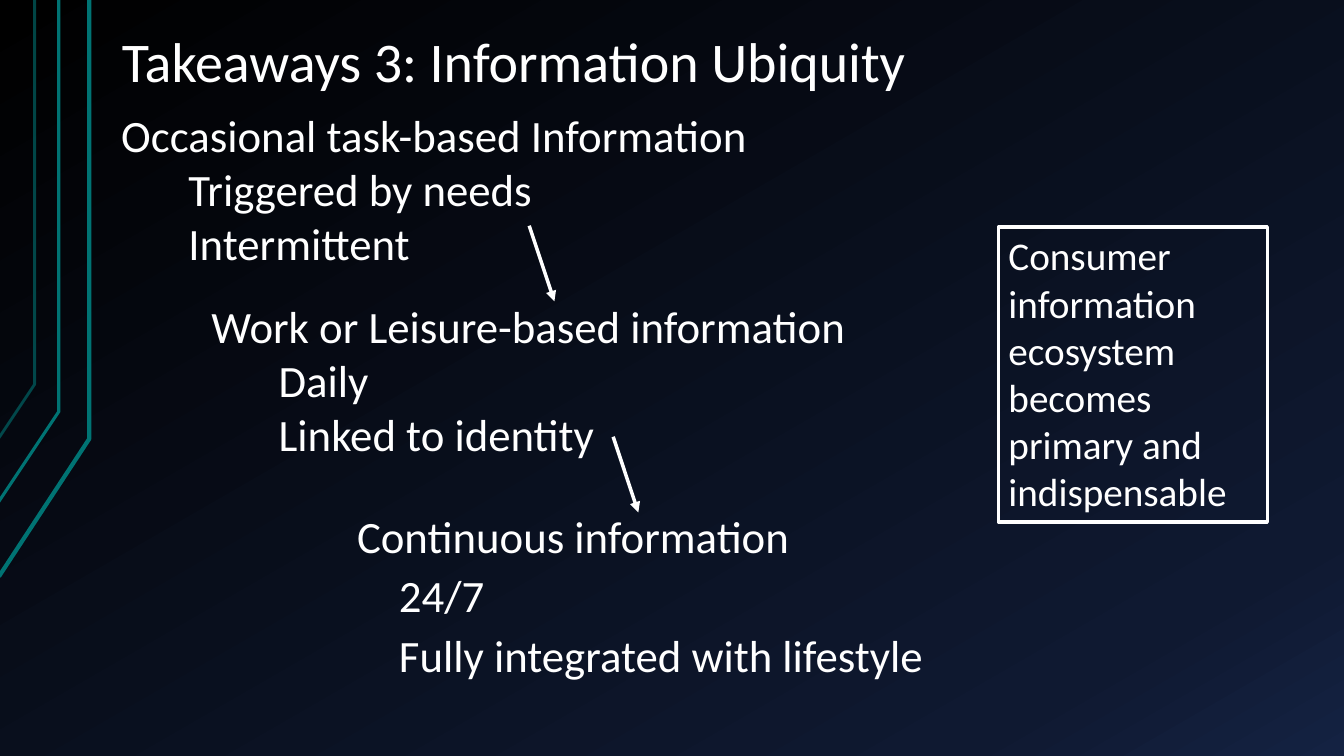
"""Build the information ubiquity takeaway slide."""
from copy import deepcopy

from pptx import Presentation
from pptx.dml.color import RGBColor
from pptx.enum.shapes import MSO_CONNECTOR as CONN, MSO_SHAPE as SHAPE
from pptx.enum.text import MSO_ANCHOR as ANCHOR, MSO_AUTO_SIZE as AUTO, PP_ALIGN as ALIGN
from pptx.oxml.ns import qn
from pptx.util import Emu, Pt
from lxml.etree import SubElement

PX = 9525
WHITE = RGBColor(0xFF, 0xFF, 0xFF)
TEAL = RGBColor(0x00, 0x73, 0x73)
BACKDROP = [
    (0, RGBColor(0x00, 0x00, 0x00)),
    (85, RGBColor(0x0F, 0x19, 0x31)),
    (100, RGBColor(0x14, 0x22, 0x42)),
]


def px(*lengths):
    return [Emu(n * PX) for n in lengths]


class Deck:
    font = "Calibri"
    line_width = 2.5

    def __init__(self, width, height):
        self.prs = Presentation()
        self.prs.slide_width, self.prs.slide_height = px(width, height)
        self.slide = None

    def add_slide(self):
        self.slide = self.prs.slides.add_slide(self.prs.slide_layouts[5])

    def background(self, stops, angle):
        fill = self.slide.background.fill
        fill.gradient()
        fill.gradient_angle = 360 - angle
        gs_list = fill._fill._gradFill.find(qn("a:gsLst"))
        for _ in range(len(stops) - len(gs_list)):
            gs_list.append(deepcopy(gs_list[-1]))
        for stop, (position, color) in zip(fill.gradient_stops, stops):
            stop.position = position / 100
            stop.color.rgb = color

    def circuit(self, points, width, opacity=100):
        start, *rest = points
        builder = self.slide.shapes.build_freeform(*start, scale=PX)
        builder.add_line_segments(rest, close=False)
        sp = builder.convert_to_shape()
        sp.shadow.inherit = False
        sp.fill.background()
        sp.line.color.rgb = TEAL
        sp.line.width = Pt(width)
        if opacity < 100:
            clr = sp.line._ln.find(".//" + qn("a:srgbClr"))
            SubElement(clr, qn("a:alpha"), val=str(opacity * 1000))

    def set_text(self, sp, lines, size, indent=0, spacing=None, before=0,
                 anchor=ANCHOR.TOP, fit=AUTO.NONE):
        tf = sp.text_frame
        tf.word_wrap = True
        tf.auto_size = fit
        tf.vertical_anchor = anchor
        for i, line in enumerate(lines):
            p = tf.add_paragraph() if i else tf.paragraphs[0]
            p.text = line
            p.alignment = ALIGN.LEFT
            p.line_spacing = spacing
            p.font.name = self.font
            p.font.size = Pt(size)
            p.font.color.rgb = WHITE
            if i:
                p.level = 1
                p.space_before = Pt(before)
                p._p.get_or_add_pPr().set("marL", str(indent * PX))

    def inset(self, sp, side, end):
        tf = sp.text_frame
        tf.margin_left, tf.margin_right = px(side, side)
        tf.margin_top, tf.margin_bottom = px(end, end)

    def title(self, text, box, size):
        sp = self.slide.shapes.title
        sp.left, sp.top, sp.width, sp.height = px(*box)
        self.inset(sp, 12, 7)
        self.set_text(sp, [text], size, spacing=0.9, anchor=ANCHOR.BOTTOM)

    def text(self, lines, box, **style):
        sp = self.slide.shapes.add_textbox(*px(*box))
        self.set_text(sp, lines, 32, **style)
        return sp

    def callout(self, text, box, size):
        sp = self.slide.shapes.add_shape(SHAPE.RECTANGLE, *px(*box))
        sp.shadow.inherit = False
        sp.fill.background()
        sp.line.color.rgb = WHITE
        sp.line.width = Pt(self.line_width)
        self.set_text(sp, [text], size, fit=AUTO.SHAPE_TO_FIT_TEXT)

    def arrow(self, x, y, dx, dy):
        cxn = self.slide.shapes.add_connector(CONN.STRAIGHT, *px(x, y, x + dx, y + dy))
        cxn.line.color.rgb = WHITE
        cxn.line.width = Pt(self.line_width)
        SubElement(cxn.line._ln, qn("a:tailEnd"), type="triangle")
        SubElement(cxn._element.spPr, qn("a:effectLst"))


def main():
    deck = Deck(1280, 720)
    deck.add_slide()
    deck.background(BACKDROP, 60)
    deck.circuit([(-1, 549), (85, 418), (85, 0)], 3)
    deck.circuit([(-2, 479), (56, 392), (56, 0)], 2.25)
    deck.circuit([(-1, 417), (33, 366), (33, 0)], 2, opacity=60)

    deck.title("Takeaways 3: Information Ubiquity", (104, 16, 1088, 81), 40)
    continuous = deck.text(
        ["Continuous information", "24/7", "Fully integrated with lifestyle"],
        (328, 483, 639, 190), indent=40, spacing=0.9, before=8)
    deck.inset(continuous, 12, 7)
    deck.callout("Consumer information ecosystem becomes primary and indispensable",
                 (951, 216, 256, 281), 28)
    deck.text(["Occasional task-based Information", "Triggered by needs", "Intermittent"],
              (106, 98, 648, 165), indent=64, fit=AUTO.SHAPE_TO_FIT_TEXT)
    deck.text(["Work or Leisure-based information", "Daily", "Linked to identity"],
              (192, 280, 672, 210), indent=64, fit=AUTO.SHAPE_TO_FIT_TEXT)
    for x, y in [(504, 215), (584, 416)]:
        deck.arrow(x, y, 24, 72)

    deck.prs.save("out.pptx")


if __name__ == "__main__":
    main()
